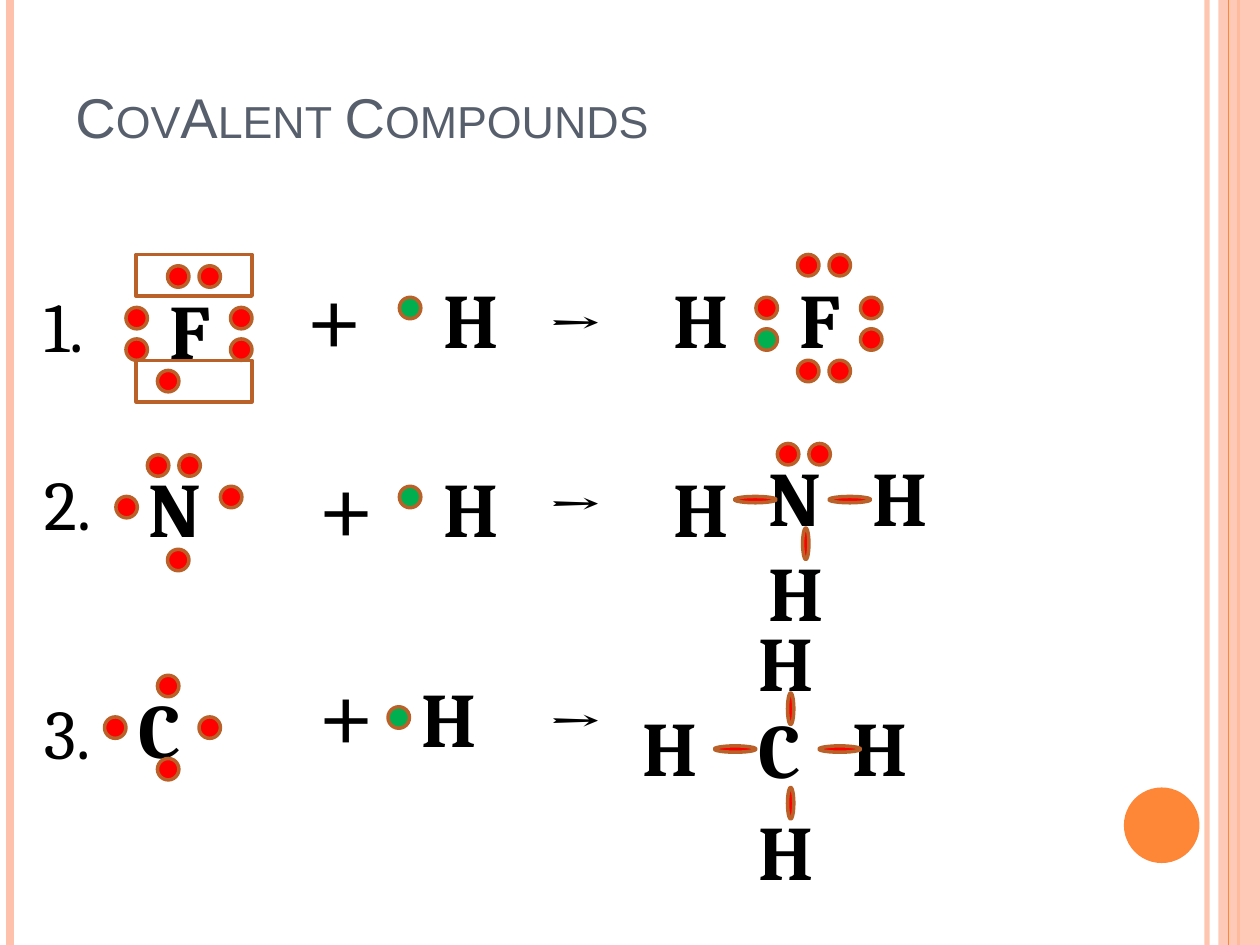
from lxml import etree
from pptx import Presentation
from pptx.dml.color import RGBColor
from pptx.enum.shapes import MSO_CONNECTOR, MSO_SHAPE
from pptx.enum.text import MSO_ANCHOR
from pptx.oxml.ns import qn
from pptx.util import Inches, Pt

COLORS = {
    "title": "575F6D", "ink": "000000", "rail": "FEC2AC", "accent": "FE8637",
    "outline": "B96128", "red": "FF0000", "green": "00B050",
}
DOT = (0.17, 0.17)
FRAME = (0.92, 0.33)
BOND_ACROSS = (0.33, 0.05)
BOND_DOWN = (0.05, 0.25)
SYMBOL = {"size": Pt(44), "name": "Cambria", "bold": True}
NUMBER = {"size": Pt(40), "name": "Cambria"}
PLUS = {"size": Pt(60), "name": "Cambria"}
TITLE = {"size": Pt(32), "name": "Arial"}

# Part offsets are measured from the top left corner of each particle's box.
FLUORINE = {
    "symbols": [("F", 0.25, 0.17)],
    "red": [(0.33, 0.09), (0.58, 0.09), (0, 0.42), (0.83, 0.42),
            (0, 0.67), (0.83, 0.67), (0.25, 0.92)],
    "frames": [(0.08, 0), (0.08, 0.84)],
}
NITROGEN = {
    "symbols": [("N", 0.16, 0)],
    "red": [(0.25, 0), (0.5, 0), (0, 0.33), (0.83, 0.25), (0.41, 0.75)],
}
CARBON = {
    "symbols": [("C", 0.17, 0)],
    "red": [(0.42, 0), (0, 0.33), (0.75, 0.33), (0.42, 0.66)],
}
HYDROGEN = {"symbols": [("H", 0.25, 0)], "green": [(0, 0.25)]}
CLOSE_HYDROGEN = {"symbols": [("H", 0.17, 0)], "green": [(0, 0.34)]}
HYDROGEN_FLUORIDE = {
    "symbols": [("H", 0, 0.09), ("F", 1, 0.09)],
    "red": [(1.08, 0), (1.33, 0), (0.75, 0.34), (1.58, 0.34),
            (1.58, 0.59), (1.08, 0.84), (1.33, 0.84)],
    "green": [(0.75, 0.59)],
}
AMMONIA = {
    "symbols": [("H", 0, 0.09), ("N", 0.75, 0), ("H", 1.58, 0), ("H", 0.75, 0.75)],
    "red": [(0.92, 0), (1.17, 0)],
    "across": [(0.58, 0.42), (1.33, 0.42)],
    "down": [(1.12, 0.67)],
}
METHANE = {
    "symbols": [("H", 0, 0.67), ("C", 0.92, 0.69), ("H", 1.67, 0.67),
                ("H", 0.92, 0), ("H", 0.92, 1.5)],
    "across": [(0.67, 1.09), (1.5, 1.09)],
    "down": [(1.25, 0.67), (1.25, 1.42)],
}
PART_STYLES = {
    "red": (MSO_SHAPE.OVAL, DOT, "red"),
    "green": (MSO_SHAPE.OVAL, DOT, "green"),
    "frames": (MSO_SHAPE.RECTANGLE, FRAME, None),
    "across": (MSO_SHAPE.OVAL, BOND_ACROSS, "red"),
    "down": (MSO_SHAPE.OVAL, BOND_DOWN, "red"),
}

# Signs are (text, left, top, width, height, format); particles are (parts, left, top).
REACTIONS = [
    ([("1.", 0.25, 2.19, 0.67, 0.77, NUMBER), ("+", 2.33, 1.94, 0.67, 1.11, PLUS),
      ("→", 4.25, 2.17, 0.75, 0.77, NUMBER)],
     [(FLUORINE, 1, 2.02), (HYDROGEN, 3.17, 2.11), (HYDROGEN_FLUORIDE, 5.25, 2.02)]),
    ([("2.", 0.25, 3.61, 0.67, 0.77, NUMBER), ("+", 2.42, 3.44, 0.67, 1.11, PLUS),
      ("→", 4.25, 3.61, 0.75, 0.77, NUMBER)],
     [(NITROGEN, 0.92, 3.61), (HYDROGEN, 3.17, 3.61), (AMMONIA, 5.25, 3.52)]),
    ([("3.", 0.25, 5.42, 0.67, 0.77, NUMBER), ("+", 2.42, 5.08, 0.67, 1.11, PLUS),
      ("→", 4.25, 5.33, 0.75, 0.77, NUMBER)],
     [(CARBON, 0.83, 5.36), (CLOSE_HYDROGEN, 3.08, 5.27), (METHANE, 5, 4.83)]),
]


def rgb(name):
    return RGBColor.from_string(COLORS[name])


def set_opacity(fill_parent, percent):
    color = fill_parent.find(f".//{qn('a:srgbClr')}")
    etree.SubElement(color, qn("a:alpha"), val=str(percent * 1000))


def add_text(page, text, left, top, width, height, style, color="ink"):
    box = page.shapes.add_textbox(Inches(left), Inches(top), Inches(width), Inches(height))
    box.text_frame.word_wrap = True
    span = box.text_frame.paragraphs[0].add_run()
    span.text = text
    span.font.color.rgb = rgb(color)
    for key, value in style.items():
        setattr(span.font, key, value)
    return box


def add_solid(page, kind, left, top, size, fill, outline=None):
    shape = page.shapes.add_shape(kind, Inches(left), Inches(top), *map(Inches, size))
    shape.shadow.inherit = False
    if fill:
        shape.fill.solid()
        shape.fill.fore_color.rgb = rgb(fill)
    else:
        shape.fill.background()
    if outline:
        shape.line.color.rgb = rgb(outline)
        shape.line.width = Pt(2)
    else:
        shape.line.fill.background()
    return shape


def add_rail(page, left, height, color, width, opacity=100):
    rail = page.shapes.add_connector(
        MSO_CONNECTOR.STRAIGHT, Inches(left), 0, Inches(left), Inches(height))
    rail.line.color.rgb = rgb(color)
    rail.line.width = Pt(width)
    properties = rail._element.spPr
    if opacity < 100:
        set_opacity(properties, opacity)
    etree.SubElement(properties, qn("a:effectLst"))


def add_border(page, width, height):
    add_rail(page, width - 0.42, height, "rail", 3, 93)
    add_rail(page, 0.08, height, "rail", 4.5)
    add_rail(page, width - 0.17, height, "accent", 1.5)
    band = add_solid(page, MSO_SHAPE.RECTANGLE, width - 0.33, 0, (0.33, height), "rail")
    set_opacity(band._element.spPr, 87)
    add_rail(page, width - 0.25, height, "accent", 0.75)
    add_solid(page, MSO_SHAPE.OVAL, width - 1.08, height - 1.25, (0.6, 0.6), "accent")


def add_title(page, left, top, width, height):
    box = add_text(page, "CovAlent Compounds", left, top, width, height, TITLE, "title")
    box.text_frame.vertical_anchor = MSO_ANCHOR.BOTTOM
    box.text_frame.margin_bottom = Inches(0.56)
    span = box.text_frame.paragraphs[0].runs[0]
    span.font._element.set("cap", "small")


def add_particle(page, parts, left, top):
    """Place the symbols, electrons and bonds of one atom or molecule."""
    for symbol, x, y in parts["symbols"]:
        width = 1.08 if symbol == "N" else 0.67
        add_text(page, symbol, left + x, top + y, width, 0.84, SYMBOL)
    for part, (kind, size, fill) in PART_STYLES.items():
        for x, y in parts.get(part, []):
            add_solid(page, kind, left + x, top + y, size, fill, "outline")


def add_reaction(page, signs, particles):
    for sign in signs:
        add_text(page, *sign)
    for particle in particles:
        add_particle(page, *particle)


def main():
    deck = Presentation()
    deck.slide_width, deck.slide_height = Inches(10), Inches(7.5)
    page = deck.slides.add_slide(deck.slide_layouts[6])
    add_border(page, 10, 7.5)
    add_title(page, 0.5, 0.5, 8.17, 1.25)
    for signs, particles in REACTIONS:
        add_reaction(page, signs, particles)
    deck.save("out.pptx")


if __name__ == "__main__":
    main()
